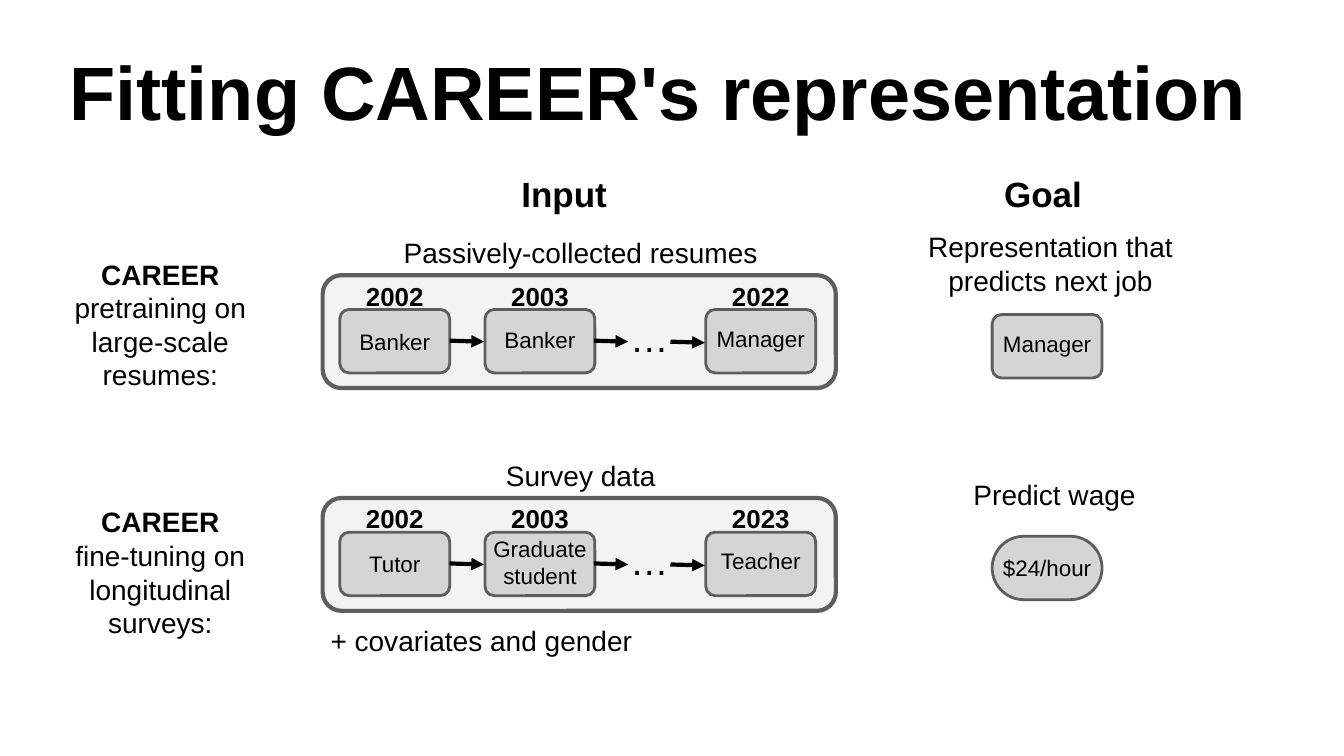
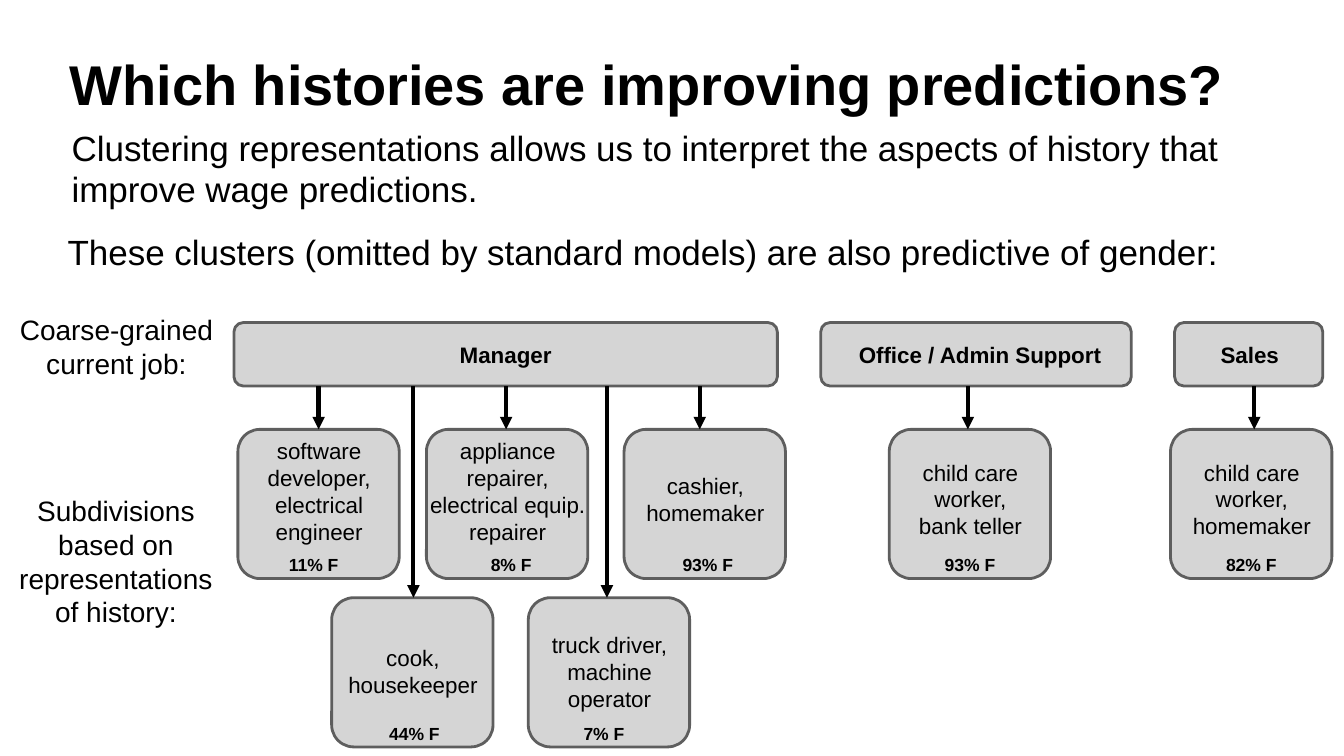
from dataclasses import dataclass

from lxml.etree import SubElement
from pptx import Presentation
from pptx.dml.color import RGBColor
from pptx.enum.shapes import MSO_CONNECTOR as Connector, MSO_SHAPE as Shape
from pptx.enum.text import MSO_ANCHOR as Anchor, MSO_AUTO_SIZE as AutoSize, PP_ALIGN as Align
from pptx.oxml.ns import qn
from pptx.util import Emu, Pt

PX = 9144


@dataclass(frozen=True)
class Theme:
    """Colours, type sizes and line widths of the deck."""
    font: str = "Arial"
    ink: RGBColor = RGBColor(0, 0, 0)
    edge: RGBColor = RGBColor(0x5E, 0x5E, 0x5E)
    node: RGBColor = RGBColor(0xD5, 0xD5, 0xD5)
    panel: RGBColor = RGBColor(0xF3, 0xF3, 0xF3)
    lead: float = 25
    text: float = 20
    year: float = 18.5
    small: float = 16
    share: float = 12.5
    dots: float = 27.5
    thin: float = 2
    thick: float = 3
    inset: int = 3
    corner: float = 0.147


THEME = Theme()


@dataclass(frozen=True)
class Stage:
    """One training stage: its input history and its goal."""
    top: int
    caption: str
    label: str
    label_shift: int
    jobs: tuple
    years: tuple
    goal: str
    goal_left: int
    goal_shift: int
    target: str
    target_shift: int
    target_format: dict


@dataclass(frozen=True)
class Card:
    """One cluster of job histories; offsets count from its left edge."""
    left: int
    top: int
    lines: tuple
    middle: int
    share: str
    share_shift: int
    arrow_shift: int


def px(value):
    """Turn px into EMU."""
    return Emu(round(value * PX))


def apply(target, formats):
    """Set each named attribute of the target."""
    for name, value in formats.items():
        setattr(target, name, value)


def write(shape, lines, size, bold=(False,), align=Align.CENTER, anchor=Anchor.TOP,
          wrap=True, shift=0, lift=0, spacing=1.0):
    """Fill a shape with paragraphs, the last bold flag serving the rest."""
    frame = shape.text_frame
    apply(frame, {
        "word_wrap": wrap, "auto_size": AutoSize.NONE, "vertical_anchor": anchor,
        "margin_left": px(THEME.inset + 2 * shift), "margin_right": px(THEME.inset),
        "margin_top": px(THEME.inset), "margin_bottom": px(THEME.inset + 2 * lift),
    })
    for index, line in enumerate(lines):
        para = frame.add_paragraph() if index else frame.paragraphs[0]
        apply(para, {"alignment": align, "line_spacing": spacing, "space_before": Pt(0)})
        span = para.add_run()
        span.text = line
        apply(span.font, {"name": THEME.font, "size": Pt(size),
                          "bold": bold[min(index, len(bold) - 1)]})
        span.font.color.rgb = THEME.ink


def place(shape, box):
    """Move a shape to a box of left, top, width and height."""
    apply(shape, dict(zip(("left", "top", "width", "height"), map(px, box))))


def add_label(page, box, lines, size, **formats):
    """Add a text box."""
    write(page.shapes.add_textbox(*map(px, box)), lines, size, **formats)


def add_block(page, box, fill, width, corner=THEME.corner):
    """Add an outlined rounded rectangle."""
    block = page.shapes.add_shape(Shape.ROUNDED_RECTANGLE, *map(px, box))
    block.adjustments[0] = corner
    block.shadow.inherit = False
    block.fill.solid()
    block.fill.fore_color.rgb = fill
    block.line.color.rgb = THEME.edge
    block.line.width = Pt(width)
    return block


def add_node(page, box, text, corner=THEME.corner, **formats):
    """Add a grey block with its own centred text."""
    block = add_block(page, box, THEME.node, THEME.thin, corner)
    write(block, [text], THEME.small, anchor=Anchor.MIDDLE, **formats)


def add_arrow(page, start, end):
    """Add a straight arrow between two points."""
    arrow = page.shapes.add_connector(Connector.STRAIGHT, *map(px, start + end))
    arrow.line.color.rgb = THEME.ink
    arrow.line.width = Pt(THEME.thick)
    SubElement(arrow.line._get_or_add_ln(), qn("a:tailEnd"), type="triangle")
    SubElement(arrow._element.spPr, qn("a:effectLst"))


def add_page(deck, layout, title, size):
    """Add a slide with the shared title style."""
    page = deck.slides.add_slide(deck.slide_layouts[layout])
    place(page.shapes.title, (66, 59, 1201, 78))
    write(page.shapes.title, [title], size, bold=(True,), align=Align.LEFT, spacing=0.8)
    return page


def fill_body(page, box, text):
    """Set the body placeholder as plain text without a bullet."""
    body = page.placeholders[1]
    place(body, box)
    write(body, [text], THEME.lead, align=Align.LEFT)
    for para in body.text_frame.paragraphs:
        settings = para._p.get_or_add_pPr()
        settings.set("marL", "0")
        settings.set("indent", "0")
        SubElement(settings, qn("a:buNone"))


def add_history(page, left, top, stage):
    """Draw the panel of dated jobs at a corner."""
    add_label(page, (left - 54, top - 42, 620, 68), [stage.caption], THEME.text)
    add_block(page, (left, top, 509, 112), THEME.panel, THEME.thick, 0.167)
    for shift, lift, job, year in zip((17, 161, 380), (0, 2, 3), stage.jobs, stage.years):
        add_node(page, (left + shift, top + 34, 109, 63), job, lift=lift)
        add_label(page, (left + shift + 4, top + 2, 101, 37), [year], THEME.year,
                  bold=(True,), anchor=Anchor.MIDDLE)
    for shift, drop in ((126, 65), (269, 65), (345, 66)):
        add_arrow(page, (left + shift, top + drop), (left + shift + 34, top + drop + 1))
    add_label(page, (left + 302, top + 36, 33, 57), ["…"], THEME.dots, align=Align.LEFT)


def add_stage(page, stage):
    """Draw one row: label, history and goal."""
    top = stage.top
    add_label(page, (50, top + stage.label_shift, 218, 170), ["CAREER", stage.label],
              THEME.text, bold=(True, False))
    add_history(page, 320, top, stage)
    add_label(page, (stage.goal_left, top + stage.goal_shift, 290, 78), [stage.goal], THEME.text)
    add_node(page, (984, top + stage.target_shift, 109, 63), stage.target,
             wrap=False, **stage.target_format)


def add_card(page, card):
    """Draw a cluster with its share of women and the arrow from its job."""
    left, top = card.left, card.top
    add_block(page, (left, top, 160, 148), THEME.node, THEME.thin)
    add_label(page, (left - 7, top, 175, 2 * card.middle), card.lines, THEME.small,
              anchor=Anchor.MIDDLE)
    add_label(page, (left + card.share_shift, top + 121, 98, 27), [card.share], THEME.share,
              bold=(True,), anchor=Anchor.MIDDLE)
    center = left + card.arrow_shift
    add_arrow(page, (center, 383), (center, top))


def build_fitting(deck):
    """Build the slide on pretraining and fine-tuning."""
    page = add_page(deck, 5, "Fitting CAREER's representation", 54)
    for left, heading in ((445, "Input"), (920, "Goal")):
        add_label(page, (left, 168, 229, 63), [heading], THEME.lead, bold=(True,))
    stages = (
        Stage(273, "Passively-collected resumes", "pretraining on large-scale resumes:", -21,
              ("Banker", "Banker", "Manager"), ("2002", "2003", "2022"),
              "Representation that predicts next job", 897, -48, "Manager", 39, {"lift": 3}),
        Stage(494, "Survey data", "fine-tuning on longitudinal surveys:", 4,
              ("Tutor", "Graduate student", "Teacher"), ("2002", "2003", "2023"),
              "Predict wage", 901, -23, "$24/hour", 38, {"corner": 0.5}),
    )
    for stage in stages:
        add_stage(page, stage)
    add_label(page, (299, 616, 357, 63), ["+ covariates and gender"], THEME.text)


def build_clusters(deck):
    """Build the slide on clusters of job histories."""
    page = add_page(deck, 1, "Which histories are improving predictions?", 40)
    fill_body(page, (68, 122, 1262, 103),
              "Clustering representations allows us to interpret the aspects of history "
              "that improve wage predictions.")
    add_label(page, (64, 226, 1262, 126),
              ["These clusters (omitted by standard models) are also predictive of gender:"],
              THEME.lead, align=Align.LEFT)
    add_label(page, (16, 307, 199, 104), ["Coarse-grained current job:"], THEME.text)
    add_label(page, (16, 487, 198, 199),
              ["Subdivisions based on representations of history:"], THEME.text)
    for left, width, shift, job in ((232, 539, 0, "Manager"),
                                    (814, 308, 4, "Office / Admin Support"),
                                    (1165, 147, 1, "Sales")):
        add_node(page, (left, 320, width, 63), job, bold=(True,), shift=shift)
    upper, lower = 426, 593
    cards = (
        Card(236, upper, ("software developer,", "electrical engineer"), 61, "11% F", 26, 80),
        Card(423, upper, ("appliance repairer, electrical equip. repairer",), 61, "8% F", 35, 79),
        Card(619, upper, ("cashier, homemaker",), 69, "93% F", 34, 75),
        Card(329, lower, ("cook, housekeeper",), 73, "44% F", 33, 81),
        Card(524, lower, ("truck driver, machine operator",), 73, "7% F", 26, 78),
        Card(882, upper, ("child care worker,", "bank teller"), 69, "93% F", 31, 78),
        Card(1161, upper, ("child care worker,", "homemaker"), 69, "82% F", 31, 83),
    )
    for card in cards:
        add_card(page, card)


def main():
    """Build and save the deck."""
    deck = Presentation()
    apply(deck, {"slide_width": px(1333), "slide_height": px(750)})
    build_fitting(deck)
    build_clusters(deck)
    deck.save("out.pptx")


if __name__ == "__main__":
    main()
